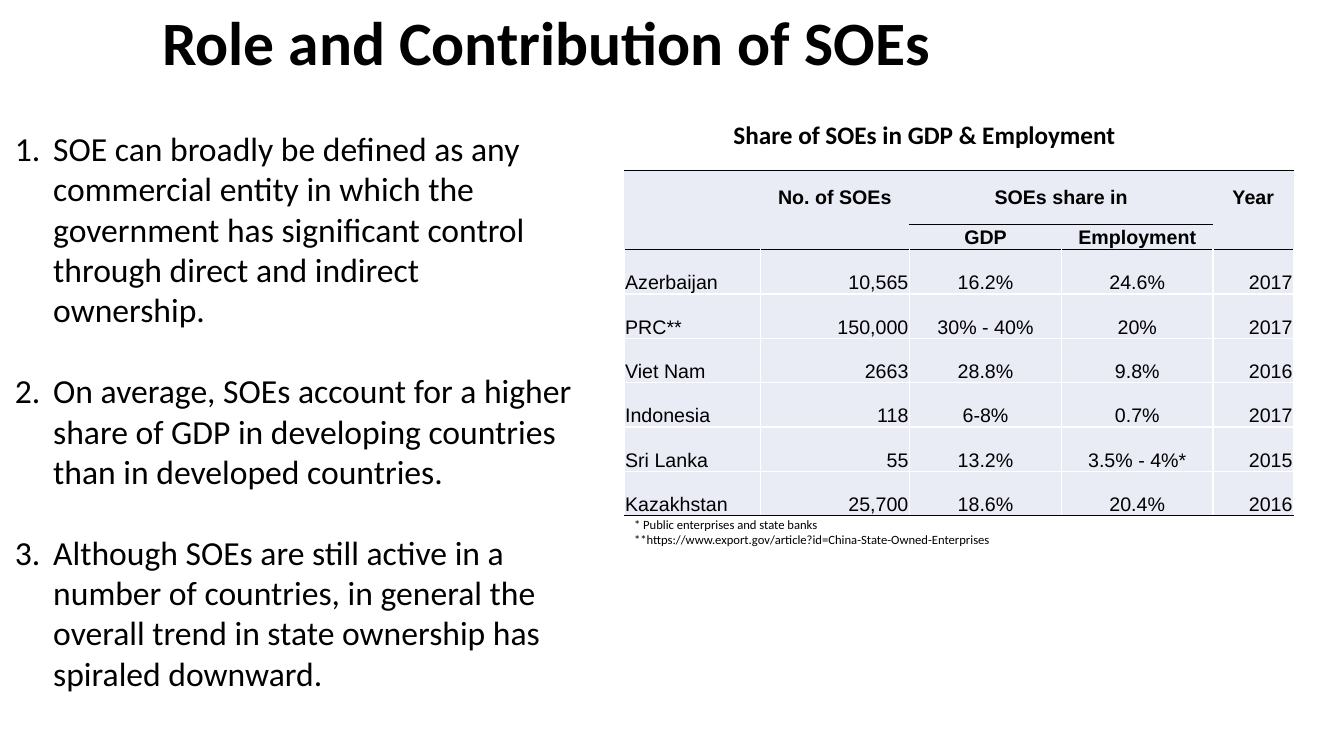
from dataclasses import dataclass
from typing import Optional

from lxml.etree import SubElement
from pptx import Presentation
from pptx.dml.color import RGBColor
from pptx.enum.text import MSO_ANCHOR, PP_ALIGN
from pptx.oxml.ns import qn
from pptx.util import Inches, Pt

COLORS = {"ink": "000000", "grid": "FFFFFF", "cell": "E9EBF5"}
NO_GRID_STYLE = "{2D5ABB26-0587-4C30-8999-92F81FD0307C}"


@dataclass
class TextBlock:
    left: float
    top: float
    width: float
    height: float
    lines: list[str]
    size: float
    bold: bool = False
    align: PP_ALIGN = PP_ALIGN.LEFT
    anchor: MSO_ANCHOR = MSO_ANCHOR.TOP
    line_spacing: Optional[float] = None
    numbered: bool = False
    gap: float = 0


BLOCKS = [
    TextBlock(1.51, 0, 11.33, 0.91, ["Role and Contribution of SOEs"], 44, bold=True,
              anchor=MSO_ANCHOR.MIDDLE, line_spacing=0.9),
    TextBlock(0.05, 1.22, 5.74, 5.76, [
        "SOE can broadly be defined as any commercial entity in which the government "
        "has significant control through direct and indirect ownership.",
        "On average, SOEs account for a higher share of GDP in developing countries "
        "than in developed countries.",
        "Although SOEs are still active in a number of countries, in general the "
        "overall trend in state ownership has spiraled downward.",
    ], 24, numbered=True, gap=29),
    TextBlock(6.19, 5.08, 4.27, 0.4, [
        "* Public enterprises and state banks",
        "**https://www.export.gov/article?id=China-State-Owned-Enterprises",
    ], 9),
    TextBlock(6.49, 1.13, 5.36, 0.4, ["Share of SOEs in GDP & Employment"], 18, bold=True,
              align=PP_ALIGN.CENTER),
]

HEADER_ROWS = 2
SHARE_COLUMNS = (2, 3)
COLUMN_WIDTHS = [1.35, 1.48, 1.51, 1.5, 0.8]
COLUMN_ALIGNS = [PP_ALIGN.LEFT, PP_ALIGN.RIGHT, PP_ALIGN.CENTER, PP_ALIGN.CENTER, PP_ALIGN.RIGHT]
SOE_ROWS = [
    ["", "No. of SOEs", "SOEs share in", "", "Year"],
    ["", "", "GDP", "Employment", ""],
    ["Azerbaijan", "10,565", "16.2%", "24.6%", "2017"],
    ["PRC**", "150,000", "30% - 40%", "20%", "2017"],
    ["Viet Nam", "2663", "28.8%", "9.8%", "2016"],
    ["Indonesia", "118", "6-8%", "0.7%", "2017"],
    ["Sri Lanka", "55", "13.2%", "3.5% - 4%*", "2015"],
    ["Kazakhstan", "25,700", "18.6%", "20.4%", "2016"],
]
ROW_HEIGHTS = [0.54, 0.24] + [0.44] * (len(SOE_ROWS) - HEADER_ROWS)


def style_runs(paragraph, font_name: str, size: float, bold: bool) -> None:
    for run in paragraph.runs:
        run.font.name = font_name
        run.font.size = Pt(size)
        run.font.bold = bold
        run.font.color.rgb = RGBColor.from_string(COLORS["ink"])


def draw_text(slide, block: TextBlock) -> None:
    box = slide.shapes.add_textbox(Inches(block.left), Inches(block.top),
                                   Inches(block.width), Inches(block.height))
    frame = box.text_frame
    frame.word_wrap = True
    frame.vertical_anchor = block.anchor
    frame.text = "\n".join(block.lines)
    for paragraph in frame.paragraphs:
        paragraph.alignment = block.align
        if block.line_spacing:
            paragraph.line_spacing = block.line_spacing
        if block.gap and paragraph.text != block.lines[-1]:
            paragraph.space_after = Pt(block.gap)
        if block.numbered:
            properties = paragraph._p.get_or_add_pPr()
            properties.set("marL", str(Inches(0.38)))
            properties.set("indent", str(Inches(-0.38)))
            SubElement(properties, qn("a:buFont"), typeface="+mj-lt")
            SubElement(properties, qn("a:buAutoNum"), type="arabicPeriod")
        style_runs(paragraph, "Calibri", block.size, block.bold)


def horizontal_rule(edge: int, column: int) -> Optional[str]:
    if edge in (0, HEADER_ROWS, len(SOE_ROWS)):
        return "ink"
    if edge < HEADER_ROWS:
        return "ink" if column in SHARE_COLUMNS else None
    return "grid"


def draw_borders(cell, row: int, column: int) -> None:
    side = None if row < HEADER_ROWS else "grid"
    borders = {"a:lnL": side, "a:lnR": side,
               "a:lnT": horizontal_rule(row, column),
               "a:lnB": horizontal_rule(row + 1, column)}
    properties = cell._tc.get_or_add_tcPr()
    for tag, color in borders.items():
        if color:
            line = SubElement(properties, qn(tag), w=str(Pt(1)))
            SubElement(SubElement(line, qn("a:solidFill")), qn("a:srgbClr"), val=COLORS[color])


def fill_cell(cell, text: str, row: int, column: int) -> None:
    header = row < HEADER_ROWS
    cell.text = text
    cell.margin_left = cell.margin_right = cell.margin_top = Inches(0.01)
    cell.margin_bottom = 0
    cell.vertical_anchor = MSO_ANCHOR.MIDDLE if header else MSO_ANCHOR.BOTTOM
    paragraph = cell.text_frame.paragraphs[0]
    paragraph.alignment = PP_ALIGN.CENTER if header else COLUMN_ALIGNS[column]
    style_runs(paragraph, "Arial", 14, header)
    if not text:
        SubElement(paragraph._p, qn("a:endParaRPr"), sz="1400")
    draw_borders(cell, row, column)
    cell.fill.solid()
    cell.fill.fore_color.rgb = RGBColor.from_string(COLORS["cell"])


def draw_soe_table(slide) -> None:
    frame = slide.shapes.add_table(len(SOE_ROWS), len(COLUMN_WIDTHS), Inches(6.19), Inches(1.69),
                                   Inches(sum(COLUMN_WIDTHS)), Inches(sum(ROW_HEIGHTS)))
    table = frame.table
    table.first_row = table.horz_banding = False
    table._tbl.tblPr.find(qn("a:tableStyleId")).text = NO_GRID_STYLE
    for column, width in zip(table.columns, COLUMN_WIDTHS):
        column.width = Inches(width)
    for row, height in zip(table.rows, ROW_HEIGHTS):
        row.height = Inches(height)
    for row, texts in enumerate(SOE_ROWS):
        for column, text in enumerate(texts):
            fill_cell(table.cell(row, column), text, row, column)
    first_share, last_share = SHARE_COLUMNS
    table.cell(0, first_share).merge(table.cell(0, last_share))


def main() -> None:
    presentation = Presentation()
    presentation.slide_width = Inches(13.33)
    presentation.slide_height = Inches(7.5)
    slide = presentation.slides.add_slide(presentation.slide_layouts[6])
    draw_soe_table(slide)
    for block in BLOCKS:
        draw_text(slide, block)
    presentation.save("out.pptx")


if __name__ == "__main__":
    main()
